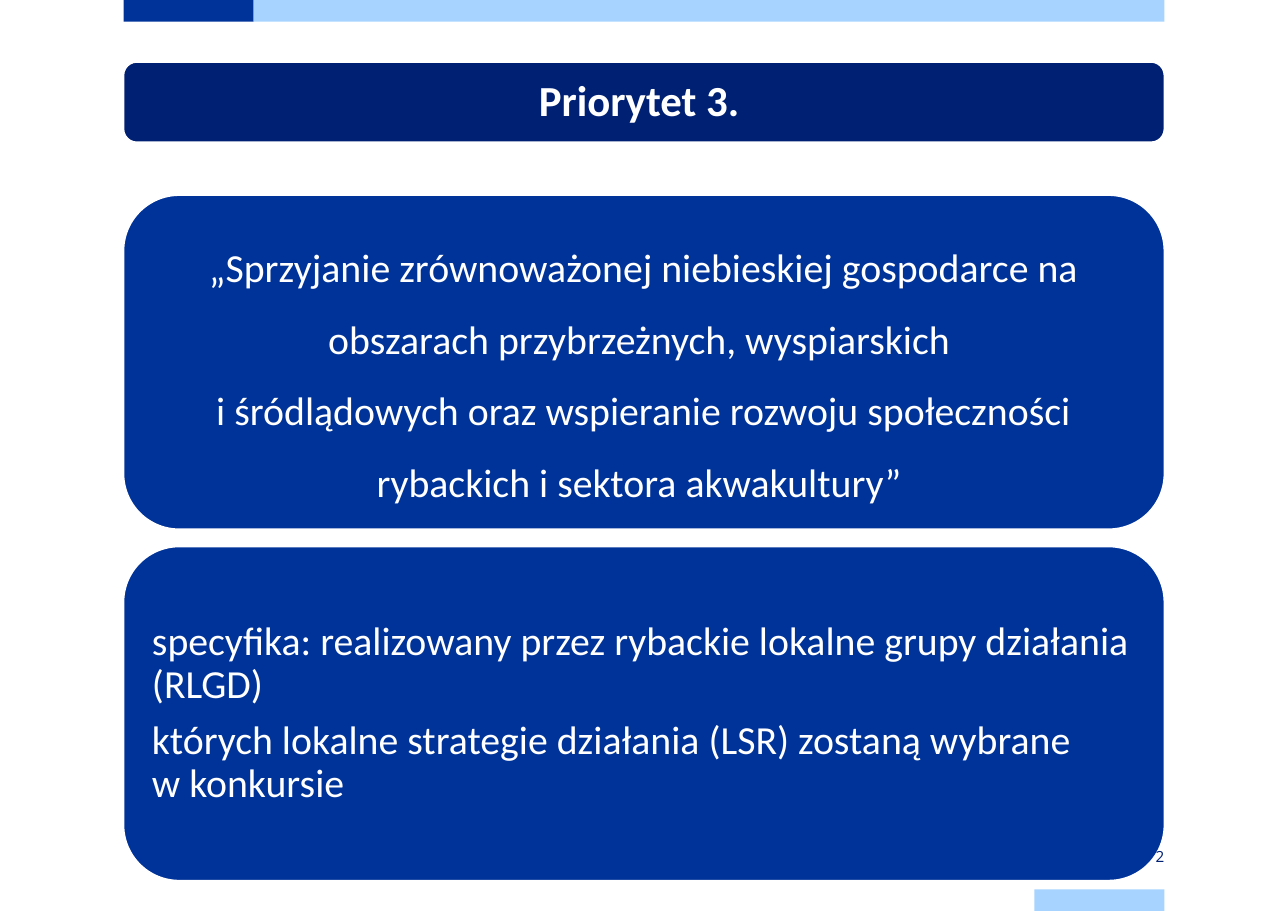
from dataclasses import dataclass

from pptx import Presentation
from pptx.dml.color import RGBColor
from pptx.enum.shapes import MSO_SHAPE as Shp
from pptx.enum.text import MSO_ANCHOR as Anchor, PP_ALIGN as Align
from pptx.slide import Slide
from pptx.util import Cm, Pt

NAVY, BLUE, SKY, WHITE = "002073", "003399", "A6D3FF", "FFFFFF"
LEFT, UNIT, BAR_H = 2.85, 3.0, 0.5
WIDTH = 8 * UNIT
PAGE_W, PAGE_H = 29.7, 21.0


@dataclass
class Bar:
    left: float
    top: float
    width: float
    fill: str


@dataclass
class Label:
    paragraphs: list[list[str]]
    size: float
    color: str = WHITE
    font: str = "Calibri"
    bold: bool = False
    align: Align = Align.LEFT
    spacing: float = 0.9
    after: float = 9
    inset_x: float = 0.28
    inset_y: float = 0.13


@dataclass
class Panel:
    top: float
    height: float
    fill: str
    label: Label


BARS = [
    Bar(LEFT, 0, UNIT, BLUE),
    Bar(LEFT + UNIT, 0, WIDTH - UNIT, SKY),
    Bar(LEFT + WIDTH - UNIT, PAGE_H - BAR_H, UNIT, SKY),
]

PANELS = [
    Panel(1.43, 1.85, NAVY, Label(
        [["Priorytet 3. "]], 28, bold=True, align=Align.CENTER,
        inset_x=0.3, inset_y=0.3)),
    Panel(4.5, 7.7, BLUE, Label(
        [["„Sprzyjanie zrównoważonej niebieskiej gospodarce na obszarach "
          "przybrzeżnych, wyspiarskich ",
          "i śródlądowych oraz wspieranie rozwoju społeczności rybackich "
          "i sektora akwakultury” "]],
        26, align=Align.CENTER, spacing=1.5)),
    Panel(12.6, 7.7, BLUE, Label(
        [["specyfika: realizowany przez rybackie lokalne grupy działania (RLGD)"],
         ["których lokalne strategie działania (LSR) zostaną wybrane",
          "w konkursie"]], 26)),
]

PAGE_NUMBER = Label([["2"]], 10, NAVY, "Open Sans", align=Align.RIGHT,
                    spacing=1.0, after=0, inset_x=0, inset_y=0.2)


def rgb(color: str) -> RGBColor:
    return RGBColor.from_string(color)


def write(sp, label: Label) -> None:
    tf = sp.text_frame
    tf.word_wrap = True
    tf.vertical_anchor = Anchor.MIDDLE
    tf.margin_left = tf.margin_right = Cm(label.inset_x)
    tf.margin_top = tf.margin_bottom = Cm(label.inset_y)
    for i, lines in enumerate(label.paragraphs):
        p = tf.add_paragraph() if i else tf.paragraphs[0]
        p.alignment = label.align
        p.line_spacing = label.spacing
        p.space_after = Pt(label.after)
        for j, line in enumerate(lines):
            if j:
                p.add_line_break()
            r = p.add_run()
            r.text = line
            r.font.name = label.font
            r.font.size = Pt(label.size)
            r.font.bold = label.bold
            r.font.color.rgb = rgb(label.color)


def add_filled(s: Slide, kind: Shp, left: float, top: float,
               width: float, height: float, fill: str):
    sp = s.shapes.add_shape(kind, Cm(left), Cm(top), Cm(width), Cm(height))
    sp.shadow.inherit = False
    sp.fill.solid()
    sp.fill.fore_color.rgb = rgb(fill)
    return sp


def add_bar(s: Slide, bar: Bar) -> None:
    sp = add_filled(s, Shp.RECTANGLE, bar.left, bar.top, bar.width, BAR_H, bar.fill)
    sp.line.fill.background()


def add_panel(s: Slide, panel: Panel) -> None:
    sp = add_filled(s, Shp.ROUNDED_RECTANGLE, LEFT, panel.top, WIDTH,
                    panel.height, panel.fill)
    sp.line.color.rgb = rgb(WHITE)
    sp.line.width = Pt(1)
    write(sp, panel.label)


def main() -> None:
    prs = Presentation()
    prs.slide_width, prs.slide_height = Cm(PAGE_W), Cm(PAGE_H)
    s = prs.slides.add_slide(prs.slide_layouts[6])
    for bar in BARS:
        add_bar(s, bar)
    for panel in PANELS:
        add_panel(s, panel)
    number = s.shapes.add_textbox(Cm(LEFT + WIDTH - UNIT), Cm(19.5), Cm(UNIT), Cm(BAR_H))
    write(number, PAGE_NUMBER)
    prs.save("out.pptx")


if __name__ == "__main__":
    main()
